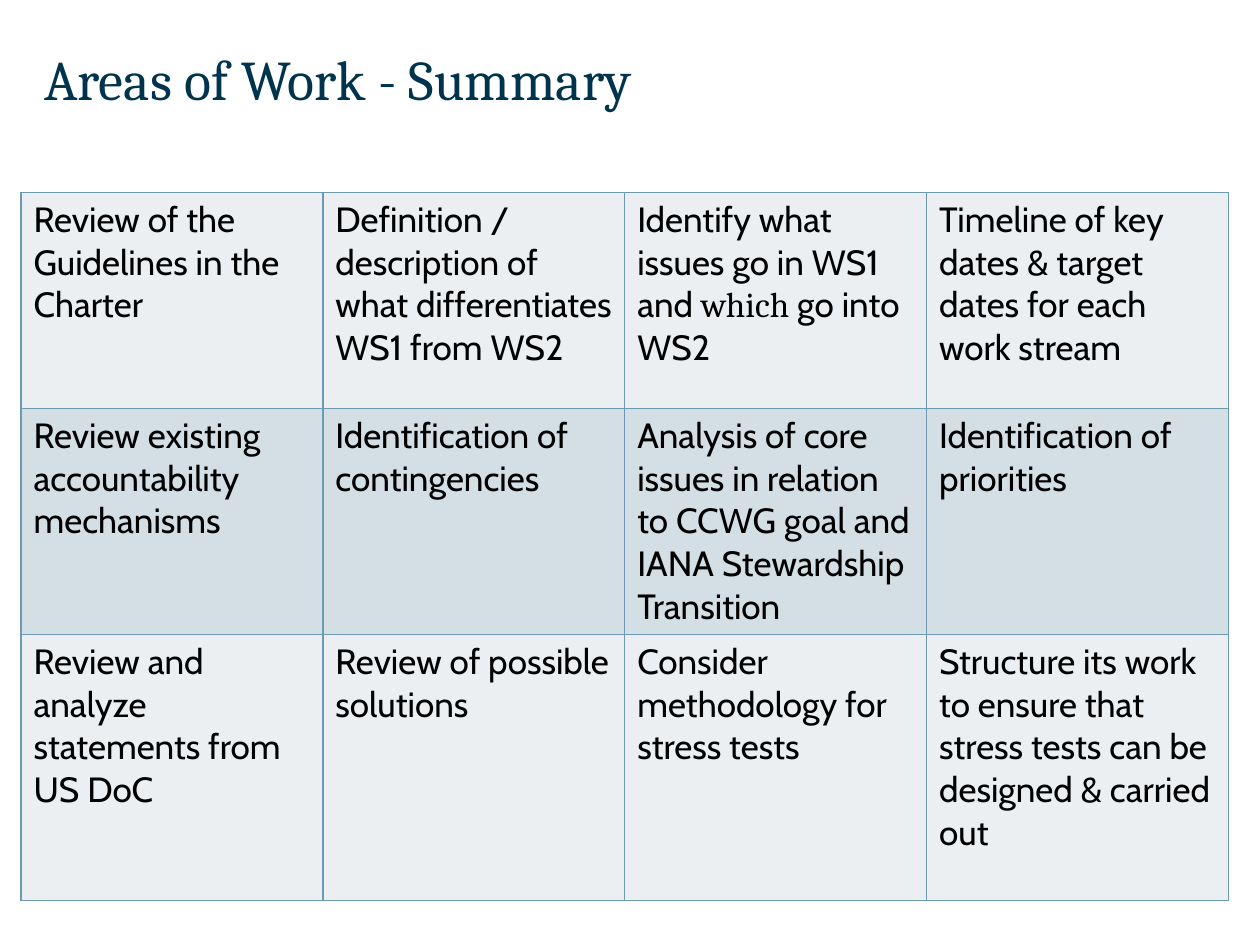
from pptx import Presentation
from pptx.dml.color import RGBColor
from pptx.enum.text import MSO_ANCHOR, PP_ALIGN
from pptx.oxml import parse_xml
from pptx.oxml.ns import nsdecls
from pptx.util import Pt


def add_run(p, text, size, font, color):
    r = p.add_run()
    r.text = text
    r.font.size = Pt(size)
    r.font.name = font
    r.font.color.rgb = RGBColor.from_string(color)


def set_borders(cell, color, width):
    tcPr = cell._tc.get_or_add_tcPr()
    for i, side in enumerate(("lnL", "lnR", "lnT", "lnB")):
        tcPr.insert(i, parse_xml(
            f'<a:{side} {nsdecls("a")} w="{Pt(width)}"><a:solidFill>'
            f'<a:srgbClr val="{color}"/></a:solidFill></a:{side}>'))


prs = Presentation()
prs.slide_width, prs.slide_height = Pt(720), Pt(540)
s = prs.slides.add_slide(prs.slide_layouts[6])

# Title
sp = s.shapes.add_textbox(Pt(11.5), Pt(23.8), Pt(404.6), Pt(48.2))
tf = sp.text_frame
tf.word_wrap = True
tf.vertical_anchor = MSO_ANCHOR.TOP
tf.margin_left, tf.margin_right = Pt(13.7), Pt(2.9)
tf.margin_top = tf.margin_bottom = Pt(1.4)
add_run(tf.paragraphs[0], "Areas of Work - Summary", 32, "Cambria", "00334D")

# Areas of work: each cell is a list of runs, Cambria for the odd ones
rows = [
    [["Review of the Guidelines in the Charter"],
     ["Definition / description of what differentiates WS1 from WS2"],
     ["Identify what issues go in WS1 and ", "which", " go into WS2"],
     ["Timeline of key dates & target dates for each work stream"]],
    [["Review existing accountability mechanisms"],
     ["Identification of contingencies"],
     ["Analysis of core issues in relation to CCWG goal and "
      "IANA Stewardship Transition"],
     ["Identification of priorities"]],
    [["Review and analyze statements from US DoC"],
     ["Review of possible solutions"],
     ["Consider methodology for stress tests"],
     ["Structure its work to ensure that stress tests can be designed "
      "& carried out"]],
]
row_heights = [123.4, 129.1, 152]
band_fills = ["EBEFF2", "D4DEE5"]
fonts = ["Cabin", "Cambria"]

table = s.shapes.add_table(3, 4, Pt(12), Pt(110), Pt(690), Pt(404.5)).table
for col in table.columns:
    col.width = Pt(172.5)

for i, (row, height) in enumerate(zip(rows, row_heights)):
    table.rows[i].height = Pt(height)
    for j, runs in enumerate(row):
        cell = table.cell(i, j)
        cell.fill.solid()
        cell.fill.fore_color.rgb = RGBColor.from_string(band_fills[i % 2])
        set_borders(cell, "6D99B3", 1)
        p = cell.text_frame.paragraphs[0]
        p.alignment = PP_ALIGN.LEFT
        for k, text in enumerate(runs):
            add_run(p, text, 20, fonts[k % 2], "000000")

prs.save("out.pptx")
